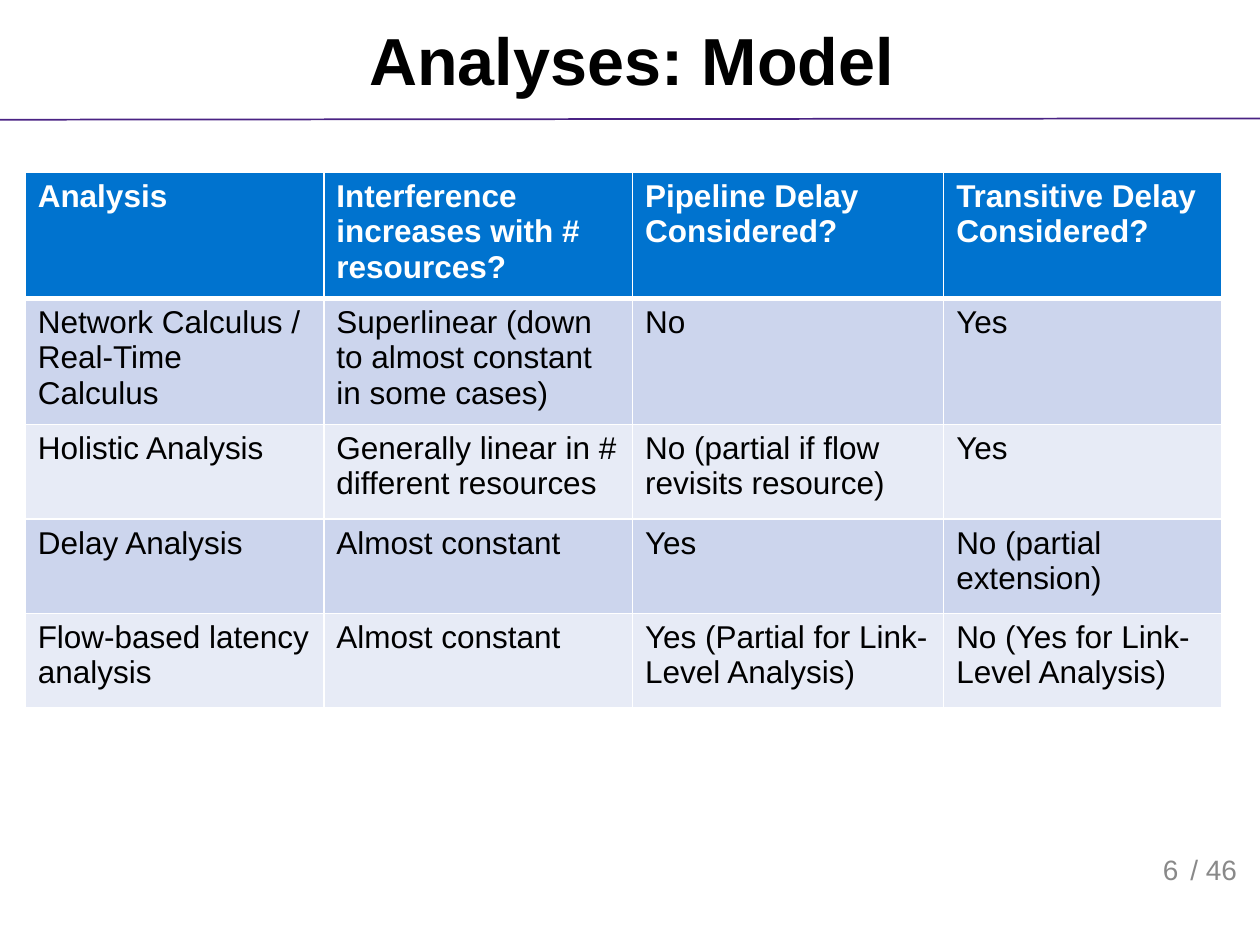
from lxml.etree import SubElement
from pptx import Presentation
from pptx.dml.color import RGBColor
from pptx.enum.shapes import MSO_CONNECTOR as Connector
from pptx.enum.text import MSO_ANCHOR as Anchor, MSO_AUTO_SIZE as AutoSize, PP_ALIGN as Align
from pptx.oxml.ns import qn
from pptx.util import Inches, Pt


def rgb(value):
    return RGBColor.from_string(value)


def style_text(frame, size, color, bold=False, align=Align.LEFT):
    paragraph = frame.paragraphs[0]
    paragraph.alignment = align
    font = paragraph.runs[0].font
    for name, value in {"name": "Arial", "size": Pt(size), "bold": bold}.items():
        setattr(font, name, value)
    font.color.rgb = rgb(color)


prs = Presentation()
prs.slide_width, prs.slide_height = Inches(10), Inches(7.5)
slide = prs.slides.add_slide(prs.slide_layouts[5])

# Title and the rule below it
rule = slide.shapes.add_connector(
    Connector.STRAIGHT, Inches(0), Inches(0.95), Inches(10), Inches(0.94))
rule.line.color.rgb = rgb("4A2384")
rule.line.width = Pt(1)
SubElement(rule._element.spPr, qn("a:effectLst"))

title = slide.shapes.title
title.left, title.top = Inches(0.33), Inches(0)
title.width, title.height = Inches(9.37), Inches(0.94)
title.text_frame.text = "Analyses: Model"
title.text_frame.auto_size = AutoSize.NONE
title.text_frame.vertical_anchor = Anchor.MIDDLE
style_text(title.text_frame, 38, "000000", bold=True, align=Align.CENTER)

# Page number and page count
for text, left, align in (("6", 8.39, Align.RIGHT), ("/ 46", 9.35, Align.LEFT)):
    page = slide.shapes.add_textbox(
        Inches(left), Inches(6.68), Inches(1.06), Inches(0.4)).text_frame
    page.text = text
    page.word_wrap = True
    page.vertical_anchor = Anchor.BOTTOM
    style_text(page, 16, "898989", align=align)

# Comparison of the analyses
rows = [
    ["Analysis", "Interference increases with # resources?",
     "Pipeline Delay Considered?", "Transitive Delay Considered?"],
    ["Network Calculus / Real-Time Calculus",
     "Superlinear (down to almost constant in some cases)", "No", "Yes"],
    ["Holistic Analysis", "Generally linear in # different resources",
     "No (partial if flow revisits resource)", "Yes"],
    ["Delay Analysis", "Almost constant", "Yes", "No (partial extension)"],
    ["Flow-based latency analysis", "Almost constant",
     "Yes (Partial for Link-Level Analysis)", "No (Yes for Link-Level Analysis)"],
]
column_widths = [2.37, 2.45, 2.47, 2.21]
row_height = 0.75
comparison = slide.shapes.add_table(
    len(rows), len(column_widths), Inches(0.2), Inches(1.37),
    Inches(sum(column_widths)), Inches(row_height * len(rows))).table
for column, width in zip(comparison.columns, column_widths):
    column.width = Inches(width)

for r, row in enumerate(rows):
    is_header = r == 0
    fill = "0073CF" if is_header else ("E7EBF6", "CCD5ED")[r % 2]
    # The rule between header and body is thicker than the rest
    border_widths = {"L": 1, "R": 1, "T": 3 if r == 1 else 1, "B": 3 if is_header else 1}
    for c, text in enumerate(row):
        cell = comparison.cell(r, c)
        cell.text = text
        style_text(cell.text_frame, 18, "FFFFFF" if is_header else "000000", bold=is_header)
        properties = cell._tc.get_or_add_tcPr()
        for side, width in border_widths.items():
            border = SubElement(properties, qn(f"a:ln{side}"), w=str(Pt(width)))
            SubElement(SubElement(border, qn("a:solidFill")), qn("a:srgbClr"), val="FFFFFF")
        cell.fill.solid()
        cell.fill.fore_color.rgb = rgb(fill)

prs.save("out.pptx")
